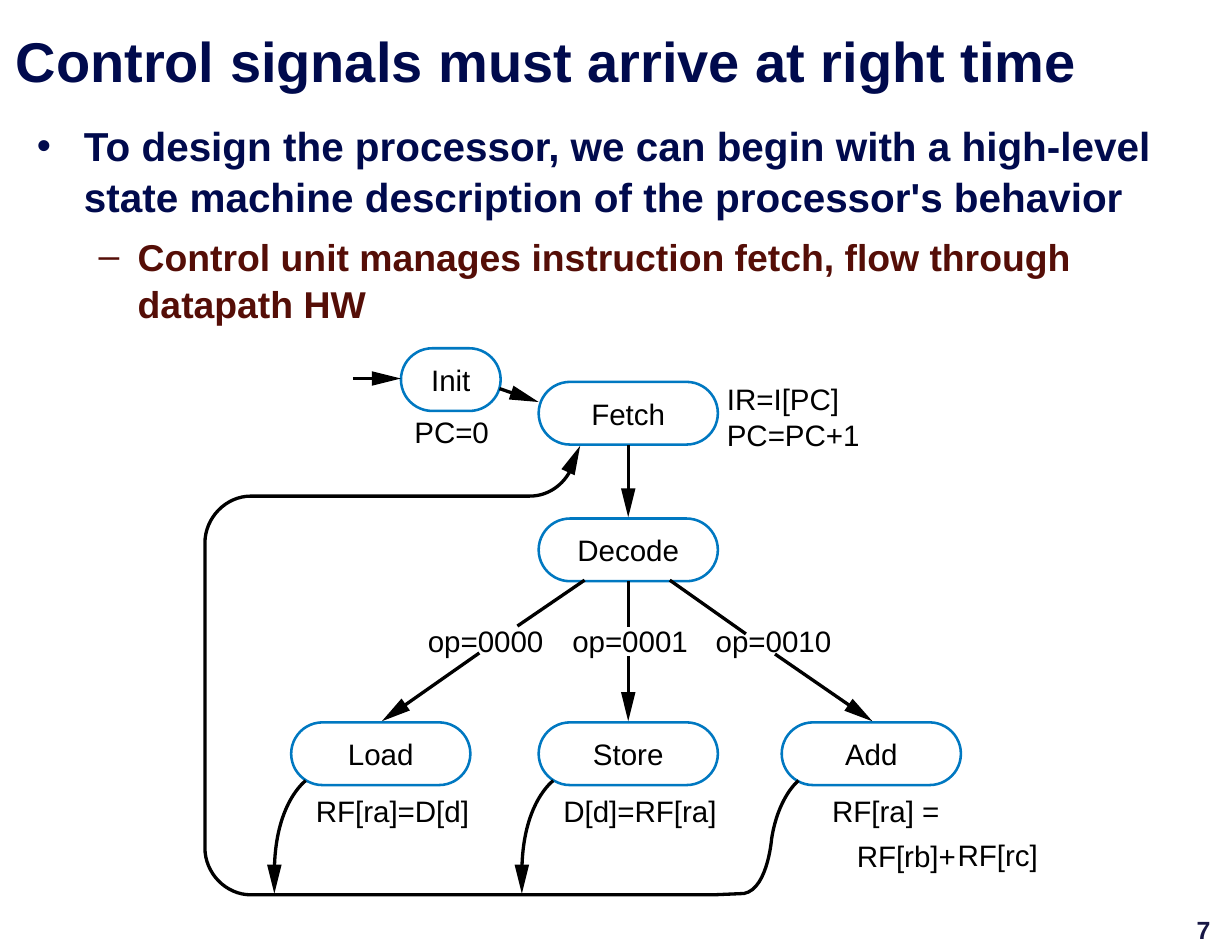
from math import hypot

from lxml.etree import SubElement
from pptx import Presentation
from pptx.dml.color import RGBColor
from pptx.enum.shapes import MSO_CONNECTOR, MSO_SHAPE
from pptx.enum.text import MSO_ANCHOR, PP_ALIGN
from pptx.oxml.ns import qn
from pptx.util import Inches, Pt

NAVY, MAROON, BLACK, BLUE = "000A4D", "550E07", "000000", "0078C1"
PAGE_INK = "171745"
STROKE = 2.13
HEAD_LENGTH, HEAD_WIDTH, SHAFT_GAP = 0.26, 0.13, 0.16
STATE_WIDTH, STATE_HEIGHT = 1.6, 0.56
BRANCH_STEP = 2.21


def color(hex_code):
    """Turn a hex string into a colour."""
    return RGBColor.from_string(hex_code)


def at(box, x, y):
    """Turn a point inside a box into slide coordinates."""
    return Inches(box[0] + x), Inches(box[1] + y)


def write(frame, text, size=19, ink=BLACK, bold=False, align=PP_ALIGN.LEFT,
          anchor=MSO_ANCHOR.TOP, insets=(0, 0, 0, 0), wrap=False, first=True):
    """Add one formatted paragraph to a text frame."""
    frame.word_wrap = wrap
    frame.vertical_anchor = anchor
    (frame.margin_left, frame.margin_top,
     frame.margin_right, frame.margin_bottom) = map(Inches, insets)
    paragraph = frame.paragraphs[0] if first else frame.add_paragraph()
    paragraph.alignment = align
    run = paragraph.add_run()
    run.text = text
    run.font.name = "Arial"
    run.font.size = Pt(size)
    run.font.bold = bold
    run.font.color.rgb = color(ink)
    return paragraph


def add_frame(slide, box):
    """Add a text box and return its frame."""
    return slide.shapes.add_textbox(*map(Inches, box)).text_frame


def add_title(slide, box):
    """Place the heading."""
    write(add_frame(slide, box), "Control signals must arrive at right time",
          size=36, ink=NAVY, bold=True, anchor=MSO_ANCHOR.MIDDLE,
          insets=(0.06, 0.06, 0.11, 0.06), wrap=True)


def add_outline(slide, box):
    """Place the two bulleted points."""
    points = [
        ("To design the processor, we can begin with a high-level state machine "
         "description of the processor's behavior", 26, NAVY, "•", 0.42, 0.42),
        ("Control unit manages instruction fetch, flow through datapath HW",
         24, MAROON, "–", 0.9, 0.35),
    ]
    frame = add_frame(slide, box)
    for level, (text, size, ink, bullet, margin, hang) in enumerate(points):
        paragraph = write(frame, text, size=size, ink=ink, bold=True, wrap=True,
                          insets=(0.06, 0.06, 0.11, 0.06), first=level == 0)
        paragraph.level = level
        paragraph.space_before = Pt(7)
        paragraph.line_spacing = 1.05
        properties = paragraph._p.get_or_add_pPr()
        properties.set("marL", str(Inches(margin)))
        properties.set("indent", str(-Inches(hang)))
        SubElement(properties, qn("a:buFont")).set("typeface", "Arial")
        SubElement(properties, qn("a:buChar")).set("char", bullet)


def add_page_number(slide, box):
    """Place the page number."""
    write(add_frame(slide, box), "7", size=16, ink=PAGE_INK, bold=True,
          align=PP_ALIGN.CENTER, insets=(0.1, 0.05, 0.1, 0.05))


def add_state(slide, box, name, x, y, width=STATE_WIDTH):
    """Draw one named state."""
    state = slide.shapes.add_shape(MSO_SHAPE.ROUNDED_RECTANGLE, *at(box, x, y),
                                   Inches(width), Inches(STATE_HEIGHT))
    state.adjustments[0] = 0.5
    state.shadow.inherit = False
    state.fill.background()
    state.line.color.rgb = color(BLUE)
    state.line.width = Pt(1.63)
    write(state.text_frame, name, align=PP_ALIGN.CENTER, anchor=MSO_ANCHOR.MIDDLE)
    return state


def add_line(slide, box, start, end, source=None):
    """Draw a straight line, joined to the bottom of its source state."""
    line = slide.shapes.add_connector(MSO_CONNECTOR.STRAIGHT,
                                      *at(box, *start), *at(box, *end))
    if source is not None:
        line.begin_connect(source, 2)
    line.line.color.rgb = color(BLACK)
    line.line.width = Pt(STROKE)
    SubElement(line._element.spPr, qn("a:effectLst"))


def add_outline_shape(slide, box, start, points, close):
    """Draw a freeform through the given points."""
    builder = slide.shapes.build_freeform(*at(box, *start))
    builder.add_line_segments([at(box, *point) for point in points], close=close)
    shape = builder.convert_to_shape()
    shape.shadow.inherit = False
    return shape


def add_head(slide, box, origin, tip):
    """Draw an arrowhead at tip, pointing away from origin; return the shaft end."""
    dx, dy = tip[0] - origin[0], tip[1] - origin[1]
    length = hypot(dx, dy)
    dx, dy = dx / length, dy / length
    base_x, base_y = tip[0] - dx * HEAD_LENGTH, tip[1] - dy * HEAD_LENGTH
    half = HEAD_WIDTH / 2
    corners = [(base_x - side * dy * half, base_y + side * dx * half)
               for side in (1, -1)]
    head = add_outline_shape(slide, box, tip, corners, True)
    head.fill.solid()
    head.fill.fore_color.rgb = color(BLACK)
    head.line.fill.background()
    return tip[0] - dx * SHAFT_GAP, tip[1] - dy * SHAFT_GAP


def add_arrow(slide, box, start, tip, source=None):
    """Draw a straight arrow."""
    add_line(slide, box, start, add_head(slide, box, start, tip), source)


def add_curve(slide, box, start, segments):
    """Draw a path of Bezier segments; a segment of one point is straight."""
    points = [point for segment in segments
              for point in (segment if len(segment) == 3 else segment * 3)]
    curve = add_outline_shape(slide, box, start, points, False)
    curve.fill.background()
    curve.line.color.rgb = color(BLACK)
    curve.line.width = Pt(STROKE)
    steps = list(curve._element.iter(qn("a:lnTo")))
    track = steps[0].getparent()
    for index in range(0, len(steps), 3):
        bezier = SubElement(track, qn("a:cubicBezTo"))
        for step in steps[index:index + 3]:
            bezier.append(step[0])
            track.remove(step)


def add_return_path(slide, box):
    """Draw the way from the operations back to Fetch."""
    add_curve(slide, box, (3.29, 1.03), [
        [(3.23, 1.2), (3.08, 1.32), (2.9, 1.32)], [(0.41, 1.32)],
        [(0.19, 1.32), (0, 1.51), (0, 1.74)], [(0, 4.46)],
        [(0, 4.69), (0.19, 4.88), (0.41, 4.88)], [(4.54, 4.88)], [(4.77, 4.87)],
        [(5.02, 4.89), (5.06, 4.38), (5.06, 4.38)],
        [(5.12, 4), (5.3, 3.86), (5.3, 3.86)]])
    add_head(slide, box, (3.24, 1.11), (3.35, 0.87))
    for shift in (0, BRANCH_STEP):
        x = 0.62 + shift
        top = (0.9 + shift, 3.86)
        add_curve(slide, box, top, [[top, (x, 4.06), (x, 4.68)]])
        add_head(slide, box, (x, 4.06), (x, 4.87))


def add_state_machine(slide, box):
    """Draw the states, transitions and actions."""
    middle = 3.78
    add_state(slide, box, "Init", 1.75, 0, width=0.89)
    fetch = add_state(slide, box, "Fetch", 2.98, 0.3)
    decode = add_state(slide, box, "Decode", 2.98, 1.52)
    for name, x in (("Load", 0.77), ("Store", 2.98), ("Add", 5.15)):
        add_state(slide, box, name, x, 3.34)

    add_arrow(slide, box, (1.32, 0.27), (1.75, 0.27))
    add_arrow(slide, box, (2.63, 0.36), (2.98, 0.48))
    add_arrow(slide, box, (middle, 0.86), (middle, 1.51), fetch)
    add_line(slide, box, (3.39, 2.07), (2.79, 2.48))
    add_line(slide, box, (middle, 2.08), (middle, 2.49), decode)
    add_line(slide, box, (4.15, 2.07), (4.83, 2.55))
    for start, tip_x in (((2.45, 2.72), 1.58), ((middle, 2.75), middle),
                         ((5.09, 2.73), 5.96)):
        add_arrow(slide, box, start, (tip_x, 3.33))
    add_return_path(slide, box)

    actions = [
        ("PC=0", 1.87, 0.59, 0.67), ("IR=I[PC]", 4.66, 0.29, 1.01),
        ("PC=PC+1", 4.66, 0.61, 1.2), ("op=0000", 1.99, 2.45, 1.04),
        ("op=0001", 3.28, 2.45, 1.04), ("op=0010", 4.56, 2.45, 1.04),
        ("RF[ra]=D[d]", 0.99, 3.97, 1.38), ("D[d]=RF[ra]", 3.2, 3.97, 1.38),
        ("RF[ra] =", 5.6, 3.97, 0.97), ("RF[rb]+", 5.82, 4.37, 0.9),
        ("RF[rc]", 6.72, 4.36, 0.73),
    ]
    for text, x, y, width in actions:
        write(add_frame(slide, (box[0] + x, box[1] + y, width, 0.32)), text)


def main():
    """Build the slide and save it."""
    deck = Presentation()
    deck.slide_width, deck.slide_height = Inches(11), Inches(8.5)
    slide = deck.slides.add_slide(deck.slide_layouts[6])
    add_title(slide, (0.08, 0.08, 10.92, 0.92))
    add_outline(slide, (0.27, 1, 10.27, 1.21))
    add_state_machine(slide, (1.83, 3.11))
    add_page_number(slide, (10.56, 8.12, 0.37, 0.38))
    deck.save("out.pptx")


if __name__ == "__main__":
    main()
